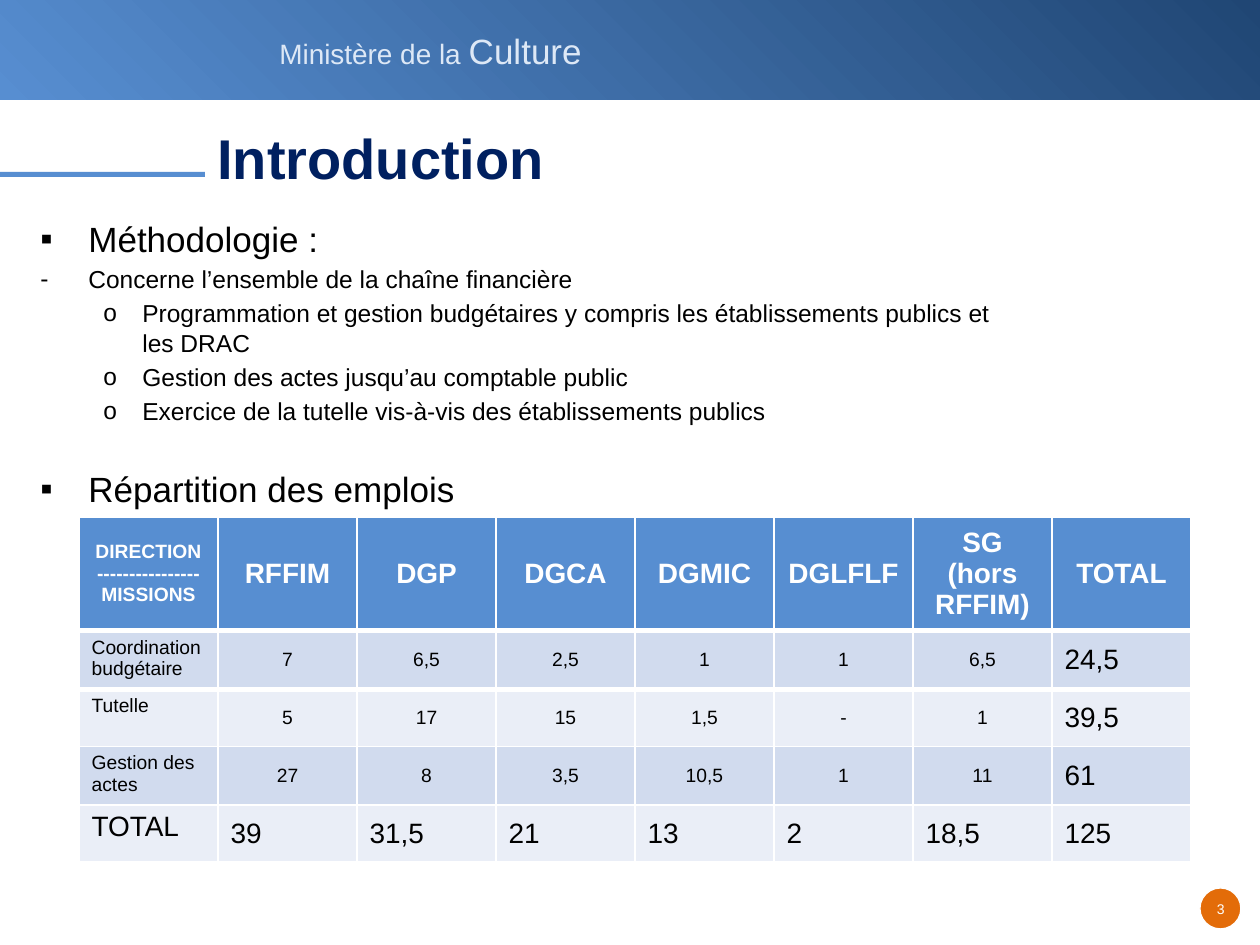
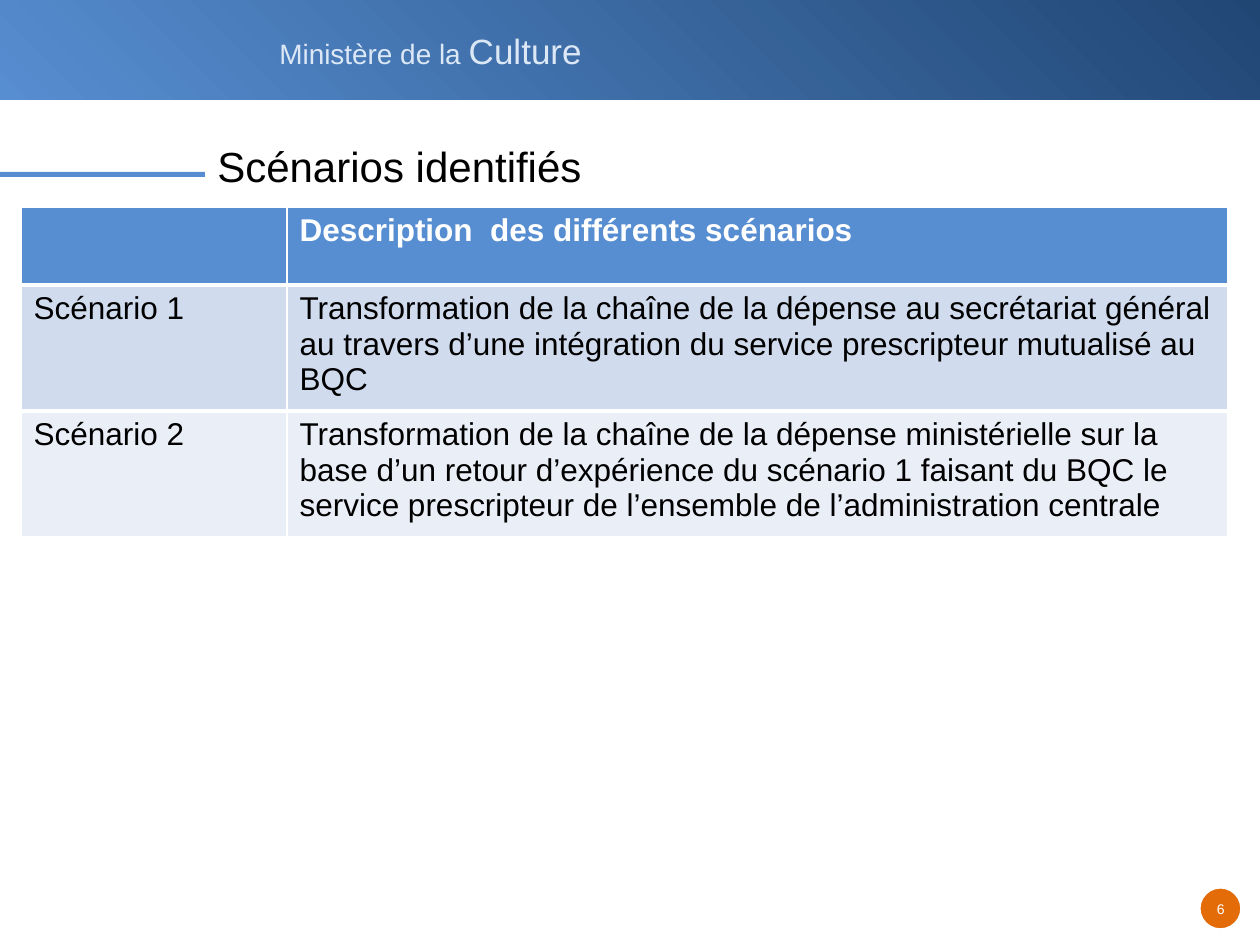
from lxml import etree
from pptx import Presentation
from pptx.dml import color
from pptx.enum import shapes, text
from pptx.oxml import ns
from pptx.util import Pt

px = 7257
font = "Arial"
blue, navy, dark, pale = "578ED1", "002060", "204674", "DDE8F6"
white, black, rust = "FFFFFF", "000000", "E36C09"
bands = ["EAEEF7", "D1DBEE"]
left, mid = text.PP_ALIGN.LEFT, text.PP_ALIGN.CENTER
top, core = text.MSO_ANCHOR.TOP, text.MSO_ANCHOR.MIDDLE


def hue(code):
    return color.RGBColor.from_string(code)


def write(frame, words, size=18, tint=black, bold=False, align=left,
          lead=None, gap=0, mark=None, level=0, join=False):
    for line in words.split("\n"):
        fresh = frame.text and not join
        para = frame.add_paragraph() if fresh else frame.paragraphs[-1]
        para.alignment = align
        para.level = level
        para.space_before = Pt(gap)
        if lead:
            para.line_spacing = Pt(lead)
        if mark:
            start, hang = [(48, 48), (102, 39)][level]
            props = para._p.get_or_add_pPr()
            props.set("marL", str(start * px))
            props.set("indent", str(-hang * px))
            etree.SubElement(props, ns.qn("a:buFont")).set("typeface", font)
            etree.SubElement(props, ns.qn("a:buChar")).set("char", mark)
        run = para.add_run()
        run.text = line
        run.font.name = font
        run.font.size = Pt(size)
        run.font.bold = bold
        run.font.color.rgb = hue(tint)


jobs = [
    ["DIRECTION\n----------------\nMISSIONS", "RFFIM", "DGP", "DGCA", "DGMIC",
     "DGLFLF", "SG (hors RFFIM)", "TOTAL"],
    ["Coordination budgétaire", "7", "6,5", "2,5", "1", "1", "6,5", "24,5"],
    ["Tutelle", "5", "17", "15", "1,5", "-", "1", "39,5"],
    ["Gestion des actes", "27", "8", "3,5", "10,5", "1", "11", "61"],
    ["TOTAL", "39", "31,5", "21", "13", "2", "18,5", "125"],
]
plans = [
    ["", "Description  des différents scénarios"],
    ["Scénario 1", "Transformation de la chaîne de la dépense au secrétariat "
     "général au travers d’une intégration du service prescripteur mutualisé au BQC"],
    ["Scénario 2", "Transformation de la chaîne de la dépense ministérielle sur la "
     "base d’un retour d’expérience du scénario 1 faisant du BQC le service "
     "prescripteur de l’ensemble de l’administration centrale"],
]
points = [
    ("Méthodologie :", 20, "▪", 0, 0),
    ("Concerne l’ensemble de la chaîne financière", 14, "-", 0, 2.8),
    ("Programmation et gestion budgétaires y compris les établissements publics "
     "et les DRAC", 14, "o", 1, 2.8),
    ("Gestion des actes jusqu’au comptable public", 14, "o", 1, 2.8),
    ("Exercice de la tutelle vis-à-vis des établissements publics", 14, "o", 1, 2.8),
    ("Répartition des emplois", 20, "▪", 0, 23.5),
]
pages = [
    ("3", "Introduction", 32, navy, True, points, jobs,
     (79, 517), [139] * 8, [107] + [57] * 4),
    ("6", "Scénarios identifiés", 24, black, False, [], plans,
     (21, 207), [266, 941], [78, 119, 119]),
]

deck = Presentation()
deck.slide_width, deck.slide_height = 1260 * px, 945 * px

for number, title, size, tint, bold, items, rows, spot, wide, high in pages:
    slide = deck.slides.add_slide(deck.slide_layouts[6])
    parts = slide.shapes

    for kind, area, fill in [
        ("RECTANGLE", (0, 0, 1260, 100), None),
        ("RECTANGLE", (0, 172, 205, 5), blue),
        ("OVAL", (1200, 888, 41, 41), rust),
    ]:
        shape = parts.add_shape(shapes.MSO_SHAPE[kind], *[n * px for n in area])
        shape.shadow.inherit = False
        shape.line.fill.background()
        if fill:
            shape.fill.solid()
            shape.fill.fore_color.rgb = hue(fill)
        else:
            shape.fill.gradient()
            shape.fill.gradient_angle = 225
            for stop, shade in zip(shape.fill.gradient_stops, [dark, blue]):
                stop.color.rgb = hue(shade)
    shape.line.color.rgb = hue(white)
    shape.line.width = Pt(0.75)

    label = parts.add_textbox(267 * px, 23 * px, 331 * px, 55 * px).text_frame
    write(label, "Ministère de la ", 16, pale)
    write(label, "Culture", 20, pale, join=True)

    badge = parts.add_textbox(1202 * px, 895 * px, 38 * px, 29 * px).text_frame
    badge.margin_left = badge.margin_right = 6 * px
    badge.margin_top = badge.margin_bottom = 6 * px
    write(badge, number, 8, white, align=mid)

    if items:
        body = parts.add_textbox(28 * px, 211 * px, 1000 * px, 620 * px).text_frame
        body.word_wrap = True
        for words, scale, mark, level, gap in items:
            write(body, words, scale, mark=mark, level=level, gap=gap)

    head = parts.add_textbox(205 * px, 129 * px, 1000 * px, 102 * px).text_frame
    head.word_wrap = True
    write(head, title, size, tint, bold, lead=32)

    area = [n * px for n in (*spot, sum(wide), sum(high))]
    grid = parts.add_table(len(rows), len(wide), *area).table
    for col, width in zip(grid.columns, wide):
        col.width = width * px
    for r, row in enumerate(rows):
        grid.rows[r].height = high[r] * px
        for c, words in enumerate(row):
            cell = grid.cell(r, c)
            if r < 2:
                props = cell._tc.get_or_add_tcPr()
                edge = etree.SubElement(props, ns.qn("a:lnT" if r else "a:lnB"))
                edge.set("w", str(Pt(3)))
                paint = etree.SubElement(edge, ns.qn("a:solidFill"))
                etree.SubElement(paint, ns.qn("a:srgbClr")).set("val", white)
            cell.fill.solid()
            cell.fill.fore_color.rgb = hue(bands[r % 2] if r else blue)
            scale, align, anchor = 18, left, top
            if rows is jobs:
                total = r == 4 or c == 7
                small = not total and (r > 0 or c == 0)
                scale = 11 if small else 16
                align = mid if r == 0 or (c and not total) else left
                anchor = core if r == 0 or c else top
            cell.vertical_anchor = anchor
            if words:
                write(cell.text_frame, words, scale, black if r else white,
                      r == 0, align)

deck.save("out.pptx")
